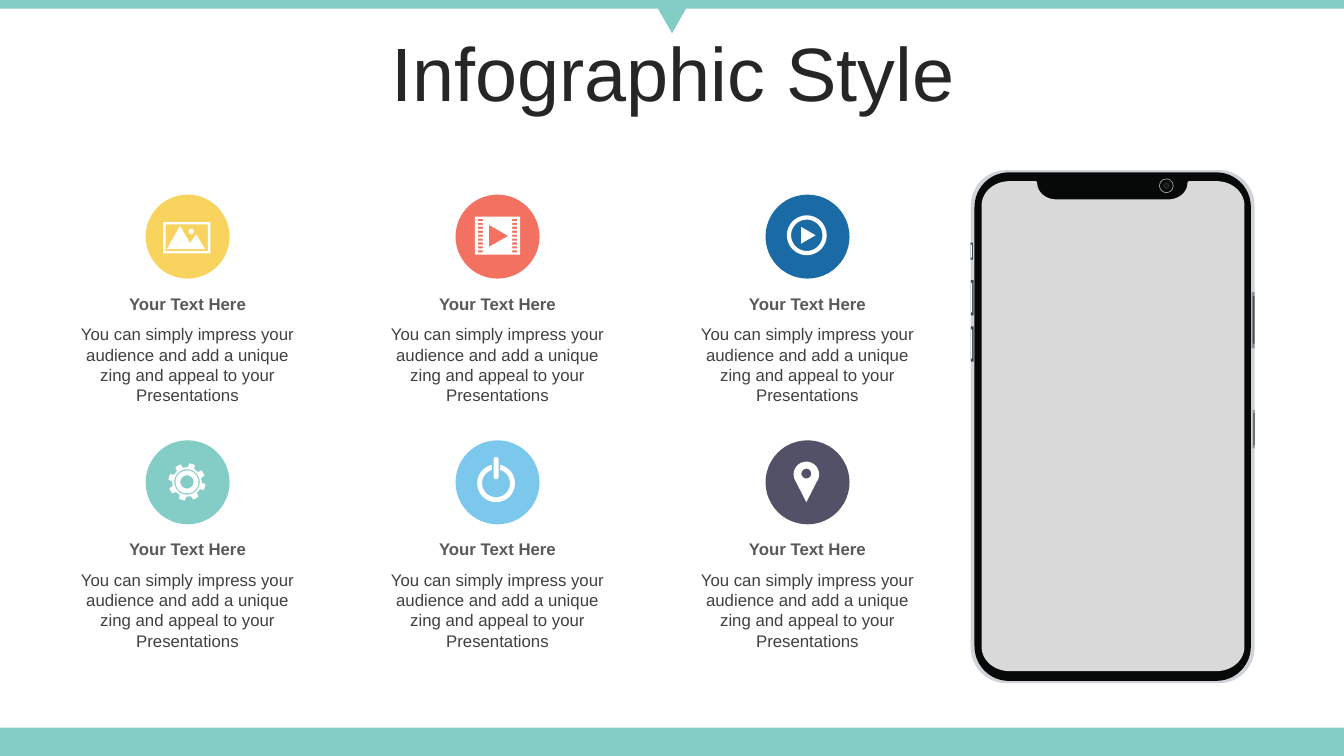
from math import cos, radians, sin

from pptx import Presentation
from pptx.dml.color import RGBColor
from pptx.enum.shapes import MSO_SHAPE as Preset
from pptx.enum.text import MSO_ANCHOR as Anchor, PP_ALIGN as Align
from pptx.util import Pt

WHITE = RGBColor(0xFF, 0xFF, 0xFF)
TEAL = RGBColor(0x84, 0xCC, 0xC6)
YELLOW = RGBColor(0xF8, 0xD4, 0x5E)
CORAL = RGBColor(0xF2, 0x71, 0x61)
BLUE = RGBColor(0x1A, 0x6B, 0xA5)
SKY = RGBColor(0x7C, 0xC8, 0xEC)
PLUM = RGBColor(0x52, 0x51, 0x68)
TITLE_INK = RGBColor(0x26, 0x26, 0x26)
HEADING_INK = RGBColor(0x59, 0x59, 0x59)
BODY_INK = RGBColor(0x40, 0x40, 0x40)
CASE = RGBColor(0xD0, 0xD4, 0xD8)
BEZEL = RGBColor(0x07, 0x08, 0x08)
SCREEN = RGBColor(0xD9, 0xD9, 0xD9)
KEY_DARK = RGBColor(0x36, 0x45, 0x51)
KEY_LIGHT = RGBColor(0xFA, 0xFD, 0xFF)
SIDE_LIGHT = RGBColor(0x8A, 0x90, 0x96)
SIDE_DARK = RGBColor(0x4A, 0x4C, 0x4D)
LENS_RIM = RGBColor(0xA6, 0xA6, 0xA6)
LENS_CORE = RGBColor(0x08, 0x14, 0x22)

HEADING = "Your Text Here"
BODY = ("You can simply impress your audience and add a unique "
        "zing and appeal to your Presentations")


def paint(part, color):
    part.shadow.inherit = False
    part.fill.solid()
    part.fill.fore_color.rgb = color
    part.line.fill.background()
    return part


def add_preset(slide, kind, box, color):
    return paint(slide.shapes.add_shape(kind, *map(Pt, box)), color)


def add_outline(slide, x, y, contours, color):
    pen = None
    for contour in contours:
        start, *rest = [(Pt(x + dx), Pt(y + dy)) for dx, dy in contour]
        if pen is None:
            pen = slide.shapes.build_freeform(*start, scale=1.0)
        else:
            pen.move_to(*start)
        pen.add_line_segments(rest, close=True)
    return paint(pen.convert_to_shape(), color)


def add_text(slide, box, words, font, spacing, anchor=Anchor.TOP):
    frame = slide.shapes.add_textbox(*map(Pt, box)).text_frame
    frame.word_wrap = True
    frame.vertical_anchor = anchor
    paragraph = frame.paragraphs[0]
    for name, value in spacing.items():
        setattr(paragraph, name, value)
    run = paragraph.add_run()
    run.text = words
    color = font["color"]
    for name, value in font.items():
        if name != "color":
            setattr(run.font, name, value)
    run.font.color.rgb = color


def arc(cx, cy, rx, ry, start, end):
    steps = max(8, round(abs(end - start) / 6))
    angles = [radians(start + (end - start) * i / steps) for i in range(steps + 1)]
    return [(cx + rx * cos(a), cy + ry * sin(a)) for a in angles]


def circle(cx, cy, r):
    return arc(cx, cy, r, r, 0, 360)[:-1]


def rect(left, top, right, bottom):
    return [(left, top), (right, top), (right, bottom), (left, bottom)]


def landscape_icon():
    mountains = [(-14.8, 9), (-5.4, -7.6), (1.8, 4.7), (6.1, -1.8), (12.6, 9)]
    return [rect(-17.4, -10.4, 16.4, 11.9), rect(-15.7, -8.8, 14.5, 10.3),
            mountains, circle(2.6, -3.7, 1.9)]


def film_icon():
    holes = [rect(left, -12.6 + 2.8 * row, left + 3.5, -11.1 + 2.8 * row)
             for row in range(9) for left in (-14, 10.5)]
    return [rect(-16.2, -14.2, 16.2, 12.9), [(-6.1, -8.3), (7.6, -0.5), (-6.1, 7.4)], *holes]


def play_icon():
    return [circle(-0.5, -0.9, 14.2), circle(-0.5, -0.9, 11.2),
            [(-4.6, -6.9), (5.8, -0.9), (-4.6, 5.1)]]


def gear_icon():
    teeth = []
    for tooth in range(8):
        middle = -74 + 45 * tooth
        for r, turn in ((10.6, -13), (13.4, -9), (13.4, 9), (10.6, 13)):
            angle = radians(middle + turn)
            teeth.append((-0.4 + r * cos(angle), -0.2 + r * sin(angle)))
    return [teeth] + [circle(-0.4, -0.2, r) for r in (9.1, 8.2, 4.7)]


def power_icon():
    ring = arc(-1, 0.7, 13.5, 13.5, -77, 257) + arc(-1, 0.7, 10, 10, 253, -73)
    bar = arc(-1, -16.3, 1.8, 1.8, 180, 360) + arc(-1, -4, 1.8, 1.8, 0, 180)
    return [ring, bar]


def pin_icon():
    return [arc(-0.8, -5.6, 9.1, 9.1, 145, 395) + [(-0.8, 14.2)], circle(-0.8, -6.2, 3.5)]


def draw_feature(slide, left, top, width, color, icon):
    size = 60
    center = left + width / 2
    add_preset(slide, Preset.OVAL, (center - size / 2, top, size, size), color)
    add_outline(slide, center, top + size / 2, icon(), WHITE)
    spacing = {"alignment": Align.CENTER, "space_before": Pt(2.4)}
    font = {"name": "Arial", "size": Pt(12)}
    add_text(slide, (left, top + 67, width, 21.6), HEADING,
             {**font, "bold": True, "color": HEADING_INK}, spacing)
    add_text(slide, (left, top + 89, width, 65.5), BODY,
             {**font, "color": BODY_INK}, spacing)


def draw_features(slide, left, top):
    features = [
        (YELLOW, landscape_icon), (CORAL, film_icon), (BLUE, play_icon),
        (TEAL, gear_icon), (SKY, power_icon), (PLUM, pin_icon),
    ]
    for index, (color, icon) in enumerate(features):
        row, column = divmod(index, 3)
        draw_feature(slide, left + 221.4 * column, top + 175.5 * row, 172.8, color, icon)


def screen_outline(left, top, right, bottom):
    rx, ry = 20, 17.3
    notch_left, notch_right, notch_drop = 47.5, 154.8, top + 1.4
    return [
        *arc(left + rx, top + ry, rx, ry, 180, 270),
        *arc(notch_left - 1.4, notch_drop, 1.4, 1.4, 270, 360),
        *arc(notch_left + 13.5, notch_drop, 13.5, 11.6, 180, 90),
        *arc(notch_right - 13.5, notch_drop, 13.5, 11.6, 90, 0),
        *arc(notch_right + 1.4, notch_drop, 1.4, 1.4, 180, 270),
        *arc(right - rx, top + ry, rx, ry, 270, 360),
        *arc(right - rx, bottom - ry, rx, ry, 0, 90),
        *arc(left + rx, bottom - ry, rx, ry, 90, 180),
    ]


def draw_phone(slide, left, top, width, height):
    body = [(0, CASE), (2.7, BEZEL)]
    for inset, color in body:
        box = (left + inset, top + inset * 0.6,
               width - 2 * inset, height - 1.2 * inset)
        add_preset(slide, Preset.ROUNDED_RECTANGLE, box, color).adjustments[0] = 0.125
    add_outline(slide, left, top, [screen_outline(7.8, 7.9, 195.5, 357.9)], SCREEN)
    keys = [
        (0, 51.8, 1.6, 12.2, KEY_DARK), (0, 53.3, 0.8, 9.2, KEY_LIGHT),
        (0, 78.5, 2, 25.2, KEY_DARK), (0, 80.6, 1, 21, KEY_LIGHT),
        (0, 111.6, 2, 25.2, KEY_DARK), (0, 113.7, 1, 21, KEY_LIGHT),
        (200.7, 87.1, 2, 40.3, SIDE_LIGHT), (201.5, 90, 1.2, 34, SIDE_DARK),
        (201.4, 171.4, 1.4, 27.4, SIDE_LIGHT), (202, 173.5, 0.8, 23, SIDE_DARK),
    ]
    for x, y, key_width, key_height, color in keys:
        add_preset(slide, Preset.RECTANGLE, (left + x, top + y, key_width, key_height), color)
    for size, color in ((10.4, LENS_RIM), (9.2, BEZEL), (4.4, TITLE_INK), (2, LENS_CORE)):
        box = (left + 139.7 - size / 2, top + 11.2 - size / 2, size, size)
        add_preset(slide, Preset.OVAL, box, color)


def draw_header(slide, width):
    add_preset(slide, Preset.RECTANGLE, (0, 0, width, 6.2), TEAL)
    pointer = (width / 2 - 13.5, 0, 27, 23.8)
    add_preset(slide, Preset.ISOSCELES_TRIANGLE, pointer, TEAL).rotation = 180
    add_text(slide, (25.2, 26.6, 911.5, 56.9), "Infographic Style",
             {"name": "Arial", "size": Pt(54), "color": TITLE_INK},
             {"alignment": Align.CENTER, "line_spacing": 0.9, "space_before": Pt(10)},
             Anchor.MIDDLE)


def draw_footer(slide, width, height):
    add_preset(slide, Preset.RECTANGLE, (0, height - 20.2, width, 20.2), TEAL)


def main():
    width, height = 960, 540
    deck = Presentation()
    deck.slide_width, deck.slide_height = Pt(width), Pt(height)
    slide = deck.slides.add_slide(deck.slide_layouts[6])
    draw_phone(slide, 693.4, 121.5, 202.8, 366.5)
    draw_footer(slide, width, height)
    draw_header(slide, width)
    draw_features(slide, 47.6, 139)
    deck.save("out.pptx")


if __name__ == "__main__":
    main()
